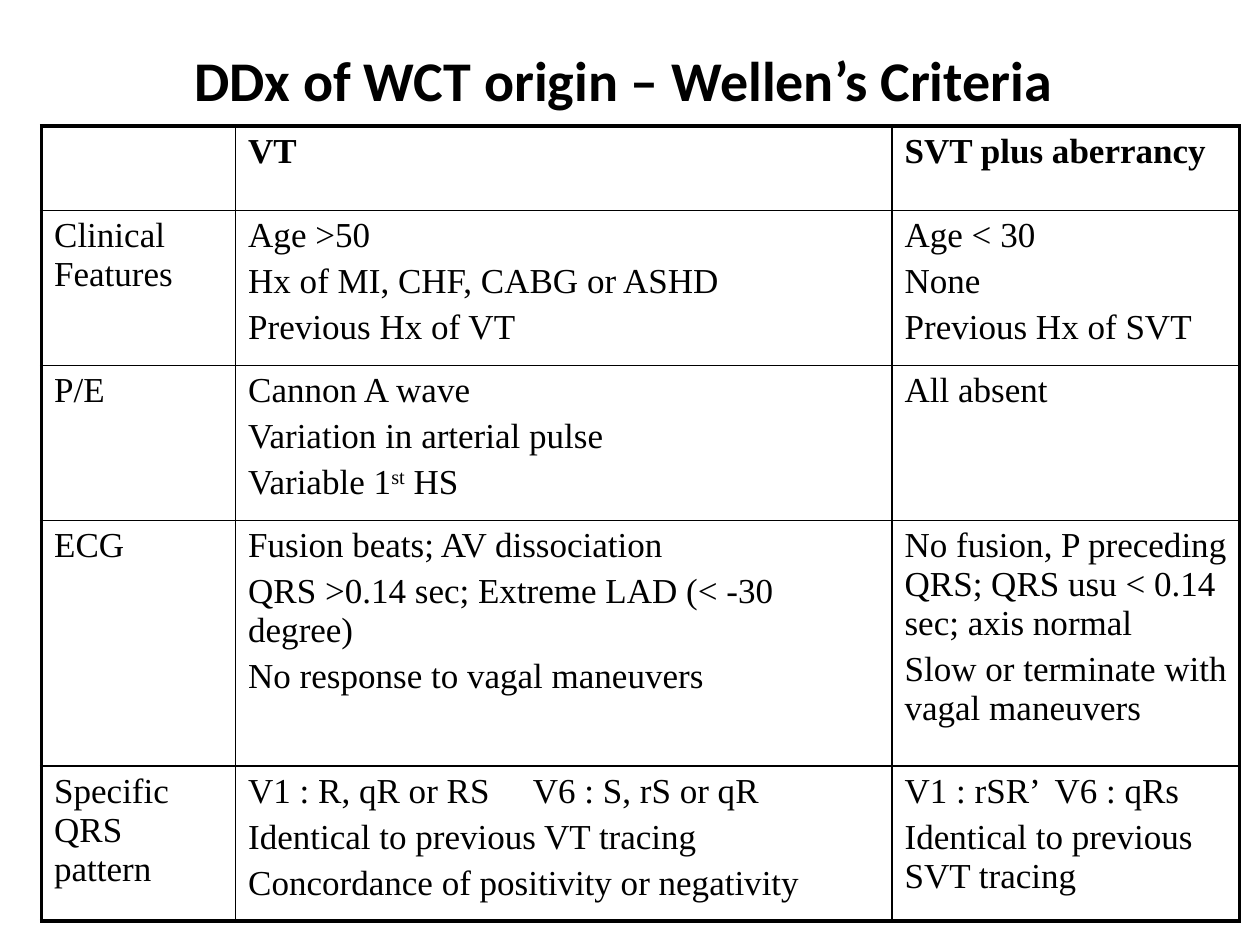
from lxml.etree import SubElement
from pptx import Presentation
from pptx.dml.color import RGBColor
from pptx.enum.text import MSO_ANCHOR, PP_ALIGN
from pptx.oxml.ns import qn
from pptx.util import Inches, Pt

# Content: each cell is a list of paragraphs; a tuple holds (text, raised text, text)
TITLE = "DDx of WCT origin – Wellen’s Criteria "
ROWS = [
    [[], ["VT"], ["SVT plus aberrancy"]],
    [["Clinical Features"],
     ["Age >50", "Hx of MI, CHF, CABG or ASHD", "Previous Hx of VT"],
     ["Age < 30", "None", "Previous Hx of SVT"]],
    [["P/E"],
     ["Cannon A wave", "Variation in arterial pulse", ("Variable 1", "st", " HS")],
     ["All absent"]],
    [["ECG"],
     ["Fusion beats; AV dissociation",
      "QRS >0.14 sec; Extreme LAD (< -30 degree)",
      "No response to vagal maneuvers"],
     ["No fusion, P preceding QRS; QRS usu < 0.14 sec; axis normal",
      "Slow or terminate with vagal maneuvers"]],
    [["Specific QRS pattern"],
     ["V1 : R, qR or RS\tV6 : S, rS or qR",
      "Identical to previous VT tracing",
      "Concordance of positivity or negativity"],
     ["V1 : rSR’\tV6 : qRs", "Identical to previous SVT tracing"]],
]
COLUMN_WIDTHS = [1.54, 5.21, 2.76]
ROW_HEIGHTS = [0.67, 1.23, 1.23, 1.95, 1.23]
TAB_STOPS = {1: 2.26, 2: 1.19}  # column: inches from the text edge
BLACK = "000000"
TITLE_FONT = {"name": "Calibri", "size": Pt(32), "bold": True}
BODY_FONT = {"name": "Times New Roman", "size": Pt(20), "bold": False}
HEADER_FONT = {**BODY_FONT, "bold": True}
CELL_FORMAT = {
    "margin_left": Inches(0.1), "margin_right": Inches(0.1),
    "margin_top": Inches(0.05), "margin_bottom": Inches(0.05),
    "vertical_anchor": MSO_ANCHOR.TOP,
}
OUTER_LINE, INNER_LINE = 2.25, 1


def set_values(target, values):
    for name, value in values.items():
        setattr(target, name, value)


def set_font(font, values, color=BLACK):
    set_values(font, values)
    font.color.rgb = RGBColor.from_string(color)


def add_tab_stop(paragraph, inches):
    tabs = SubElement(paragraph._p.get_or_add_pPr(), qn("a:tabLst"))
    SubElement(tabs, qn("a:tab"), pos=str(Inches(inches)), algn="l")


def fill_paragraph(paragraph, content, font_values, tab_stop):
    paragraph.alignment = PP_ALIGN.LEFT
    paragraph.space_before = Pt(4)
    parts = content if isinstance(content, tuple) else (content,)
    for index, text in enumerate(parts):
        run = paragraph.add_run()
        run.text = text
        set_font(run.font, font_values)
        if index == 1:
            run.font._element.set("baseline", "30000")
    if "\t" in parts[0]:
        add_tab_stop(paragraph, tab_stop)


def set_borders(cell, outer_sides):
    properties = cell._tc.get_or_add_tcPr()
    for position, side in enumerate(("L", "R", "T", "B")):
        width = OUTER_LINE if side in outer_sides else INNER_LINE
        line = properties.makeelement(qn(f"a:ln{side}"), {"w": str(Pt(width))})
        fill = SubElement(line, qn("a:solidFill"))
        SubElement(fill, qn("a:srgbClr"), val=BLACK)
        properties.insert(position, line)


presentation = Presentation()
presentation.slide_width, presentation.slide_height = Inches(10), Inches(7.5)
slide = presentation.slides.add_slide(presentation.slide_layouts[5])

# Title
title = slide.shapes.title
set_values(title, {"left": Inches(0.75), "top": Inches(0.25),
                   "width": Inches(8.5), "height": Inches(0.75)})
title.text_frame.text = TITLE
title.text_frame.vertical_anchor = MSO_ANCHOR.MIDDLE
paragraph = title.text_frame.paragraphs[0]
paragraph.alignment = PP_ALIGN.CENTER
set_font(paragraph.runs[0].font, TITLE_FONT)

# Criteria table
last_row, last_column = len(ROWS) - 1, len(COLUMN_WIDTHS) - 1
table = slide.shapes.add_table(
    len(ROWS), len(COLUMN_WIDTHS), Inches(0.33), Inches(1),
    Inches(sum(COLUMN_WIDTHS)), Inches(sum(ROW_HEIGHTS))).table
set_values(table, {"first_row": False, "horz_banding": False})
for column, width in zip(table.columns, COLUMN_WIDTHS):
    column.width = Inches(width)
for row, height in zip(table.rows, ROW_HEIGHTS):
    row.height = Inches(height)

for row_index, row in enumerate(ROWS):
    font_values = BODY_FONT if row_index else HEADER_FONT
    for column_index, paragraphs in enumerate(row):
        cell = table.cell(row_index, column_index)
        set_values(cell, CELL_FORMAT)
        cell.fill.background()
        edges = {"L": column_index == 0, "R": column_index == last_column,
                 "T": row_index == 0, "B": row_index == last_row}
        set_borders(cell, [side for side, is_outer in edges.items() if is_outer])
        frame = cell.text_frame
        for index, content in enumerate(paragraphs):
            paragraph = frame.add_paragraph() if index else frame.paragraphs[0]
            fill_paragraph(paragraph, content, font_values, TAB_STOPS.get(column_index))

presentation.save("out.pptx")
